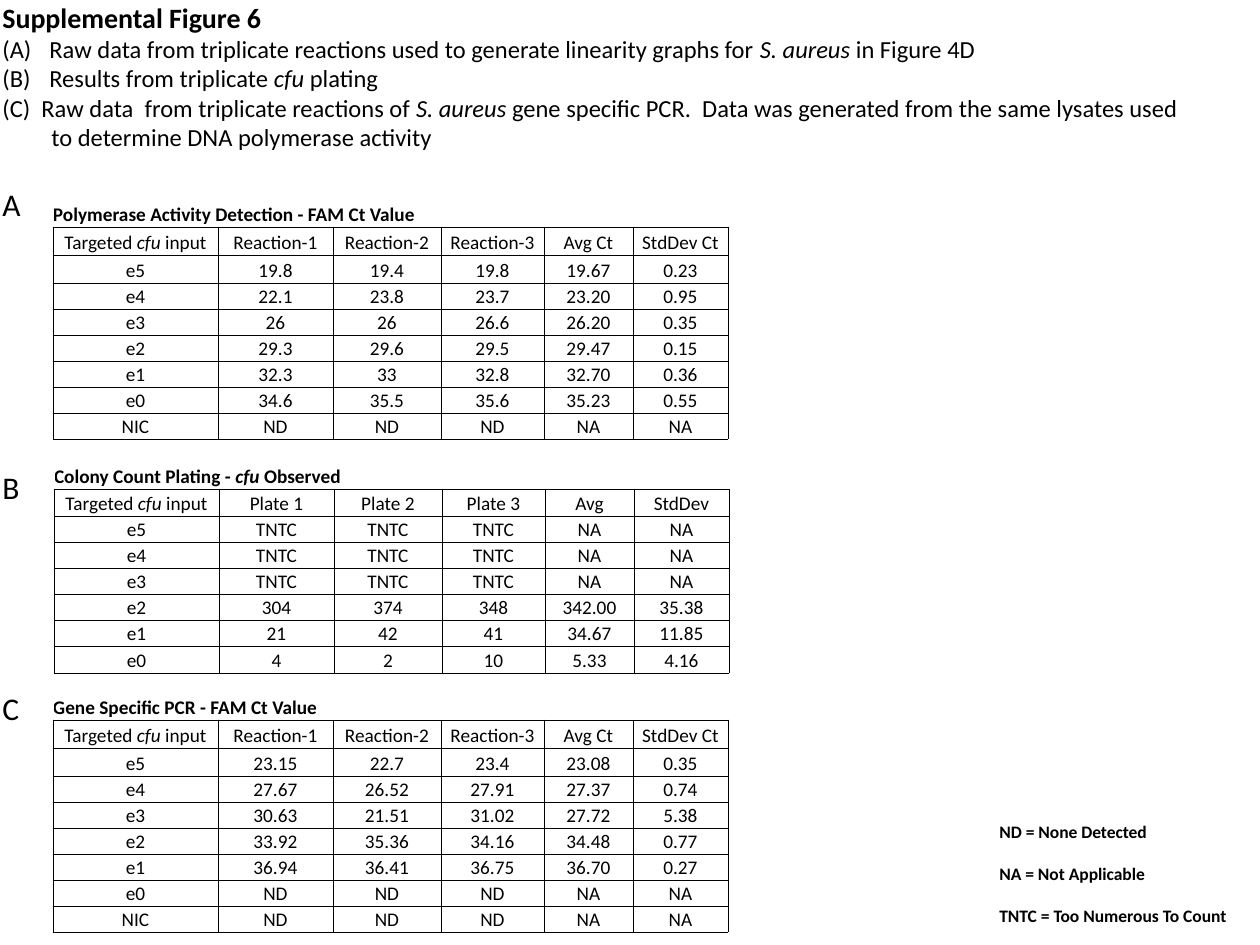
import pptx
import pptx.util
import pptx.dml.color
import pptx.enum.text
import pptx.oxml
import pptx.oxml.ns
import lxml.etree

PX = 914400 // 126
COLORS = {"ink": "000000"}
FONT = "Calibri"
qn = pptx.oxml.ns.qn


def write(paragraph, text, size, bold=False):
    for position, piece in enumerate(text.split("*")):
        if not piece:
            continue
        run = paragraph.add_run()
        run.text = piece
        run.font.name = FONT
        run.font.size = pptx.util.Pt(size)
        run.font.bold = bold
        run.font.italic = position % 2 == 1
        run.font.color.rgb = pptx.dml.color.RGBColor.from_string(COLORS["ink"])


def add_box(left, top, width, height, wrap=False):
    box = slide.shapes.add_textbox(left * PX, top * PX, width * PX, height * PX)
    box.text_frame.word_wrap = wrap
    box.text_frame.auto_size = pptx.enum.text.MSO_AUTO_SIZE.SHAPE_TO_FIT_TEXT
    return box.text_frame


presentation = pptx.Presentation()
presentation.slide_width = pptx.util.Inches(10)
presentation.slide_height = pptx.util.Inches(7.5)
slide = presentation.slides.add_slide(presentation.slide_layouts[6])

column_widths = [165, 115, 108, 103, 89, 95]
reaction_header = "Targeted *cfu* input|Reaction-1|Reaction-2|Reaction-3|Avg Ct|StdDev Ct"
reaction_heights = [27, 28, 28] + [26] * 6
tables = [
    (53, 200, 3, reaction_heights, [
        "Polymerase Activity Detection - FAM Ct Value",
        reaction_header,
        "e5|19.8|19.4|19.8|19.67|0.23",
        "e4|22.1|23.8|23.7|23.20|0.95",
        "e3|26|26|26.6|26.20|0.35",
        "e2|29.3|29.6|29.5|29.47|0.15",
        "e1|32.3|33|32.8|32.70|0.36",
        "e0|34.6|35.5|35.6|35.23|0.55",
        "NIC|ND|ND|ND|NA|NA",
    ]),
    (54, 463, 3, [26, 27] + [26] * 5 + [27], [
        "Colony Count Plating - *cfu* Observed",
        "Targeted *cfu* input|Plate 1|Plate 2|Plate 3|Avg|StdDev",
        "e5|TNTC|TNTC|TNTC|NA|NA",
        "e4|TNTC|TNTC|TNTC|NA|NA",
        "e3|TNTC|TNTC|TNTC|NA|NA",
        "e2|304|374|348|342.00|35.38",
        "e1|21|42|41|34.67|11.85",
        "e0|4|2|10|5.33|4.16",
    ]),
    (53, 693, 2, reaction_heights, [
        "Gene Specific PCR - FAM Ct Value",
        reaction_header,
        "e5|23.15|22.7|23.4|23.08|0.35",
        "e4|27.67|26.52|27.91|27.37|0.74",
        "e3|30.63|21.51|31.02|27.72|5.38",
        "e2|33.92|35.36|34.16|34.48|0.77",
        "e1|36.94|36.41|36.75|36.70|0.27",
        "e0|ND|ND|ND|NA|NA",
        "NIC|ND|ND|ND|NA|NA",
    ]),
]

for left, top, title_span, row_heights, lines in tables:
    table = slide.shapes.add_table(
        len(lines), len(column_widths), left * PX, top * PX,
        sum(column_widths) * PX, sum(row_heights) * PX).table
    table.first_row = False
    table.horz_banding = False
    for column, width in zip(table.columns, column_widths):
        column.width = width * PX
    for row, height in zip(table.rows, row_heights):
        row.height = height * PX
    table.cell(0, 0).merge(table.cell(0, title_span - 1))

    for row_index, line in enumerate(lines):
        is_title = row_index == 0
        values = line.split("|")
        values += [""] * (len(column_widths) - len(values))
        for column_index, value in enumerate(values):
            cell = table.cell(row_index, column_index)
            cell.margin_left = cell.margin_right = 0
            cell.margin_top = cell.margin_bottom = 0
            cell.vertical_anchor = pptx.enum.text.MSO_ANCHOR.BOTTOM
            cell.fill.background()
            paragraph = cell.text_frame.paragraphs[0]
            if not is_title:
                paragraph.alignment = pptx.enum.text.PP_ALIGN.CENTER
            if value:
                write(paragraph, value, 11, is_title)
            else:
                lxml.etree.SubElement(paragraph._p, qn("a:endParaRPr"), sz="1100")
            properties = cell._tc.get_or_add_tcPr()
            sides = ["B"] if is_title else ["L", "R", "T", "B"]
            for position, side in enumerate(sides):
                border = lxml.etree.Element(qn("a:ln" + side), w="6350")
                fill = lxml.etree.SubElement(border, qn("a:solidFill"))
                lxml.etree.SubElement(fill, qn("a:srgbClr"), val=COLORS["ink"])
                properties.insert(position, border)

legend = add_box(987, 815, 260, 118)
for index, text in enumerate(
        ["ND = None Detected", "NA = Not Applicable", "TNTC = Too Numerous To Count"]):
    paragraph = legend.add_paragraph() if index else legend.paragraphs[0]
    if index:
        paragraph.space_before = pptx.util.Pt(12)
    write(paragraph, text, 10, True)

for letter, top in [("A", 179), ("B", 462), ("C", 683)]:
    write(add_box(-10, top, 43, 50).paragraphs[0], letter, 18)

heading = add_box(-10, -6, 1222, 258, wrap=True)
write(heading.paragraphs[0], "Supplemental Figure 6", 16, True)
captions = [
    ("Raw data from triplicate reactions used to generate linearity graphs for "
     "*S. aureus *in Figure 4D", 47, -47, True),
    ("Results from triplicate *cfu* plating", 47, -47, True),
    ("(C)  Raw data  from triplicate reactions of *S. aureus *gene specific PCR.  "
     "Data was generated from the same lysates used", 47, -47, False),
    ("to determine DNA polymerase activity", 49, 0, False),
]
for text, margin, indent, numbered in captions:
    paragraph = heading.add_paragraph()
    properties = paragraph._p.get_or_add_pPr()
    properties.set("marL", str(margin * PX))
    properties.set("indent", str(indent * PX))
    if numbered:
        lxml.etree.SubElement(properties, qn("a:buFont"), typeface=FONT)
        lxml.etree.SubElement(properties, qn("a:buAutoNum"), type="alphaUcParenBoth")
    write(paragraph, text, 14)

presentation.save("out.pptx")
